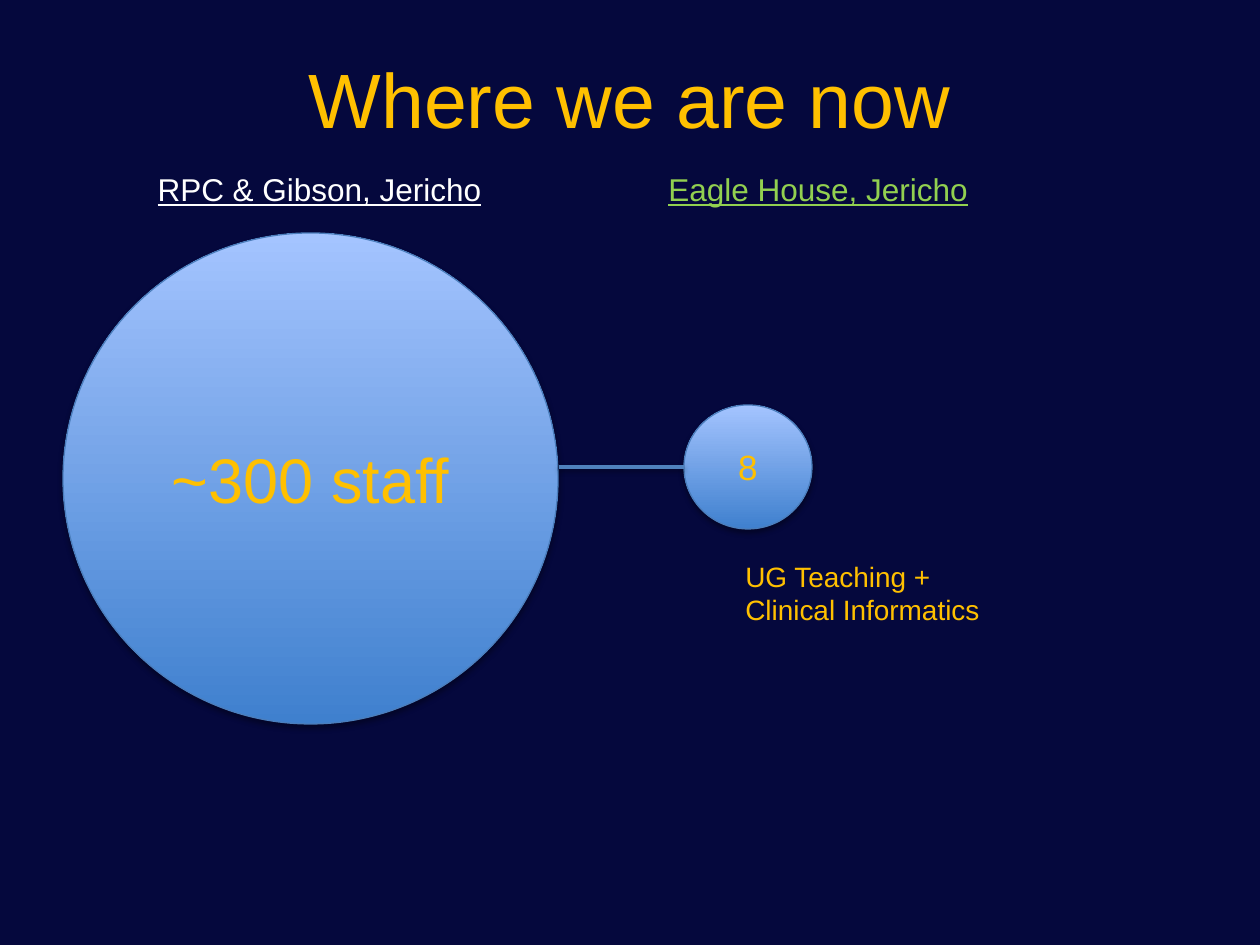
import pptx
import pptx.dml.color
import pptx.enum.shapes
import pptx.enum.text
import pptx.oxml
import pptx.oxml.ns
import pptx.util

EMU_PER_PX = 914400 / 126
ALIGN = pptx.enum.text.PP_ALIGN
ANCHOR = pptx.enum.text.MSO_ANCHOR

SLIDE_SIZE = (1260, 945)
BACKGROUND, GOLD, WHITE, GREEN = "05083D", "FFC000", "FFFFFF", "92D050"
CIRCLE_BOTTOM, CIRCLE_TOP, CIRCLE_EDGE, LINK = "3F80CE", "A4C4FF", "4B7EBC", "4F81BD"

# text, (left, top, width, height), size, colour, alignment, anchor, underlined
LABELS = [
    ("Where we are now", (63, 19, 1134, 157), 44, GOLD, ALIGN.CENTER, ANCHOR.MIDDLE, False),
    ("RPC & Gibson, Jericho", (63, 164, 513, 50), 18, WHITE, ALIGN.CENTER, ANCHOR.TOP, True),
    ("Eagle House, Jericho", (656, 164, 343, 50), 18, GREEN, ALIGN.LEFT, ANCHOR.TOP, True),
    ("UG Teaching + Clinical Informatics", (733, 553, 266, 81), 16, GOLD, ALIGN.LEFT, ANCHOR.TOP, False),
]
# text, (left, top, width, height), size
SITES = [
    ("8", (684, 405, 128, 124), 20),
    ("~300 staff", (63, 233, 495, 491), 36),
]
SITE_LINK = (559, 467, 684, 467)


def px(*lengths):
    return [pptx.util.Emu(round(length * EMU_PER_PX)) for length in lengths]


def rgb(colour):
    return pptx.dml.color.RGBColor.from_string(colour)


def write(shape, text, size, colour, align, anchor, underlined=False):
    frame = shape.text_frame
    frame.word_wrap = True
    frame.vertical_anchor = anchor
    paragraph = frame.paragraphs[0]
    paragraph.alignment = align
    run = paragraph.add_run()
    run.text = text
    run.font.name = "Arial"
    run.font.size = pptx.util.Pt(size)
    run.font.underline = underlined
    run.font.color.rgb = rgb(colour)


def add_shadow(shape, opacity, distance):
    """Cast a soft black shadow straight down; opacity in percent, distance in points."""
    properties = shape._element.spPr
    for effects in properties.findall(pptx.oxml.ns.qn("a:effectLst")):
        properties.remove(effects)
    properties.append(pptx.oxml.parse_xml(
        f'<a:effectLst {pptx.oxml.ns.nsdecls("a")}>'
        f'<a:outerShdw blurRad="{pptx.util.Pt(3.1)}" dist="{pptx.util.Pt(distance)}" '
        'dir="5400000" rotWithShape="0"><a:srgbClr val="000000">'
        f'<a:alpha val="{opacity * 1000}"/></a:srgbClr></a:outerShdw></a:effectLst>'))


def add_site(slide, text, box, size):
    circle = slide.shapes.add_shape(pptx.enum.shapes.MSO_SHAPE.OVAL, *px(*box))
    circle.fill.gradient()
    circle.fill.gradient_angle = 90
    for stop, colour in zip(circle.fill.gradient_stops, (CIRCLE_BOTTOM, CIRCLE_TOP)):
        stop.color.rgb = rgb(colour)
    circle.line.color.rgb = rgb(CIRCLE_EDGE)
    circle.line.width = pptx.util.Pt(0.75)
    circle.shadow.inherit = False
    add_shadow(circle, 35, 1.8)
    write(circle, text, size, GOLD, ALIGN.CENTER, ANCHOR.MIDDLE)


def add_link(slide):
    link = slide.shapes.add_connector(
        pptx.enum.shapes.MSO_CONNECTOR.STRAIGHT, *px(*SITE_LINK))
    link.line.color.rgb = rgb(LINK)
    link.line.width = pptx.util.Pt(2)
    add_shadow(link, 38, 1.6)


def main():
    deck = pptx.Presentation()
    deck.slide_width, deck.slide_height = px(*SLIDE_SIZE)
    slide = deck.slides.add_slide(deck.slide_layouts[6])
    slide.background.fill.solid()
    slide.background.fill.fore_color.rgb = rgb(BACKGROUND)
    for text, box, *style in LABELS:
        write(slide.shapes.add_textbox(*px(*box)), text, *style)
    for site in SITES:
        add_site(slide, *site)
    add_link(slide)
    deck.save("out.pptx")


if __name__ == "__main__":
    main()
